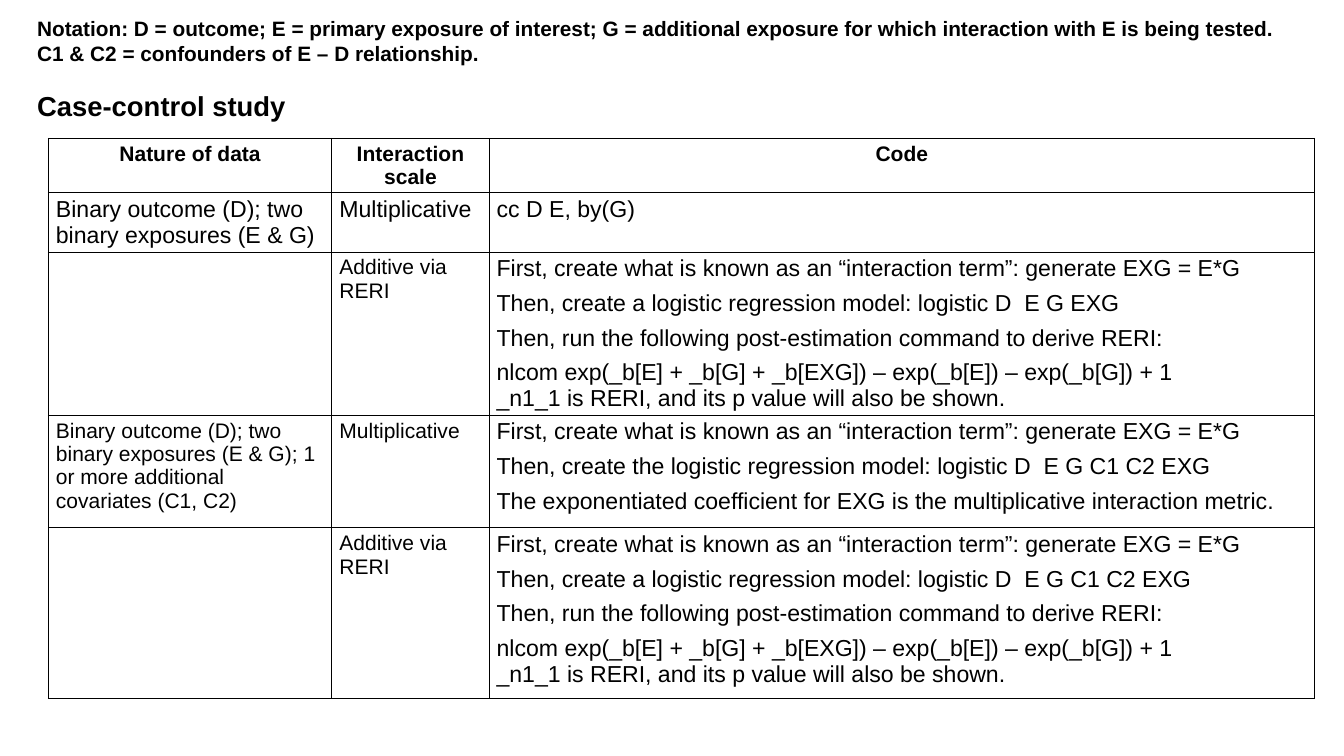
"""Build the slide of interaction commands for a case-control study."""
from lxml import etree
from pptx import Presentation
from pptx.dml.color import RGBColor
from pptx.enum import text as t
from pptx.oxml.ns import qn
from pptx.util import Inches, Pt

THEME = {"font": "Arial", "ink": "000000", "note": 19.8, "title": 26.1,
         "small": 20, "code": 22, "gap": 8.4, "line": 1}

NOTE = ("Notation: D = outcome; E = primary exposure of interest; G = additional "
        "exposure for which interaction with E is being tested. \n"
        "C1 & C2 = confounders of E – D relationship.")
TITLE = "Case-control study"

TERM = "First, create what is known as an “interaction term”: generate EXG = E*G"
RERI = ["Then, run the following post-estimation command to derive RERI:",
        "nlcom exp(_b[E] + _b[G] + _b[EXG]) – exp(_b[E]) – exp(_b[G]) + 1\n"
        "_n1_1 is RERI, and its p value will also be shown."]
PLAIN = "Binary outcome (D); two binary exposures (E & G)"
MULT, ADD = "Multiplicative", "Additive via RERI"

HEAD = ["Nature of data", "Interaction scale", "Code"]
ROWS = [
    (PLAIN, MULT, ["cc D E, by(G)"]),
    ("", ADD, [TERM, "Then, create a logistic regression model: logistic D  E G EXG", *RERI]),
    (PLAIN + "; 1 or more additional covariates (C1, C2)", MULT,
     [TERM, "Then, create the logistic regression model: logistic D  E G C1 C2 EXG",
      "The exponentiated coefficient for EXG is the multiplicative interaction metric."]),
    ("", ADD, [TERM, "Then, create a logistic regression model: logistic D  E G C1 C2 EXG",
               *RERI]),
]
WIDTHS = [3.75, 2.08, 10.92]
HEIGHTS = [0.72, 0.78, 2.13, 1.49, 2.25]


def write(frame, items, size, bold=False, align=t.PP_ALIGN.LEFT, gap=0, more=False):
    for i, item in enumerate(items):
        para = frame.add_paragraph() if i or more else frame.paragraphs[0]
        para.text = item
        para.alignment = align
        para.space_before = Pt(gap if i or more else 0)
        for run in para.runs:
            font = run.font
            font.name, font.size, font.bold = THEME["font"], Pt(size), bold
            font.color.rgb = RGBColor.from_string(THEME["ink"])


def border(cell):
    props = cell._tc.get_or_add_tcPr()
    for i, side in enumerate(("lnL", "lnR", "lnT", "lnB")):
        line = etree.Element(qn("a:" + side), w=str(Pt(THEME["line"])))
        fill = etree.SubElement(line, qn("a:solidFill"))
        etree.SubElement(fill, qn("a:srgbClr"), val=THEME["ink"])
        props.insert(i, line)


def add_title(slide):
    title = slide.shapes.title
    title.left, title.top = Inches(0.39), Inches(0.5)
    title.width, title.height = Inches(16.83), Inches(1.17)
    frame = title.text_frame
    frame.auto_size = t.MSO_AUTO_SIZE.NONE
    frame.vertical_anchor = t.MSO_ANCHOR.BOTTOM
    write(frame, [NOTE], THEME["note"], bold=True)
    write(frame, [TITLE], THEME["title"], bold=True, gap=23, more=True)


def add_grid(slide):
    shape = slide.shapes.add_table(len(HEIGHTS), len(WIDTHS), Inches(0.64), Inches(1.83),
                                   Inches(sum(WIDTHS)), Inches(sum(HEIGHTS)))
    grid = shape.table
    for col, width in zip(grid.columns, WIDTHS):
        col.width = Inches(width)
    for row, height in zip(grid.rows, HEIGHTS):
        row.height = Inches(height)
    for cell in grid.iter_cells():
        cell.fill.background()
        border(cell)
    for c, label in enumerate(HEAD):
        write(grid.cell(0, c).text_frame, [label], THEME["small"], bold=True,
              align=t.PP_ALIGN.CENTER)
    for r, (data, scale, code) in enumerate(ROWS, 1):
        size = THEME["code"] if r == 1 else THEME["small"]
        write(grid.cell(r, 0).text_frame, [data], size)
        write(grid.cell(r, 1).text_frame, [scale], size)
        write(grid.cell(r, 2).text_frame, code, THEME["code"], gap=THEME["gap"])


def main():
    deck = Presentation()
    deck.slide_width, deck.slide_height = Inches(17.78), Inches(10)
    slide = deck.slides.add_slide(deck.slide_layouts[5])
    add_title(slide)
    add_grid(slide)
    deck.save("out.pptx")


if __name__ == "__main__":
    main()
